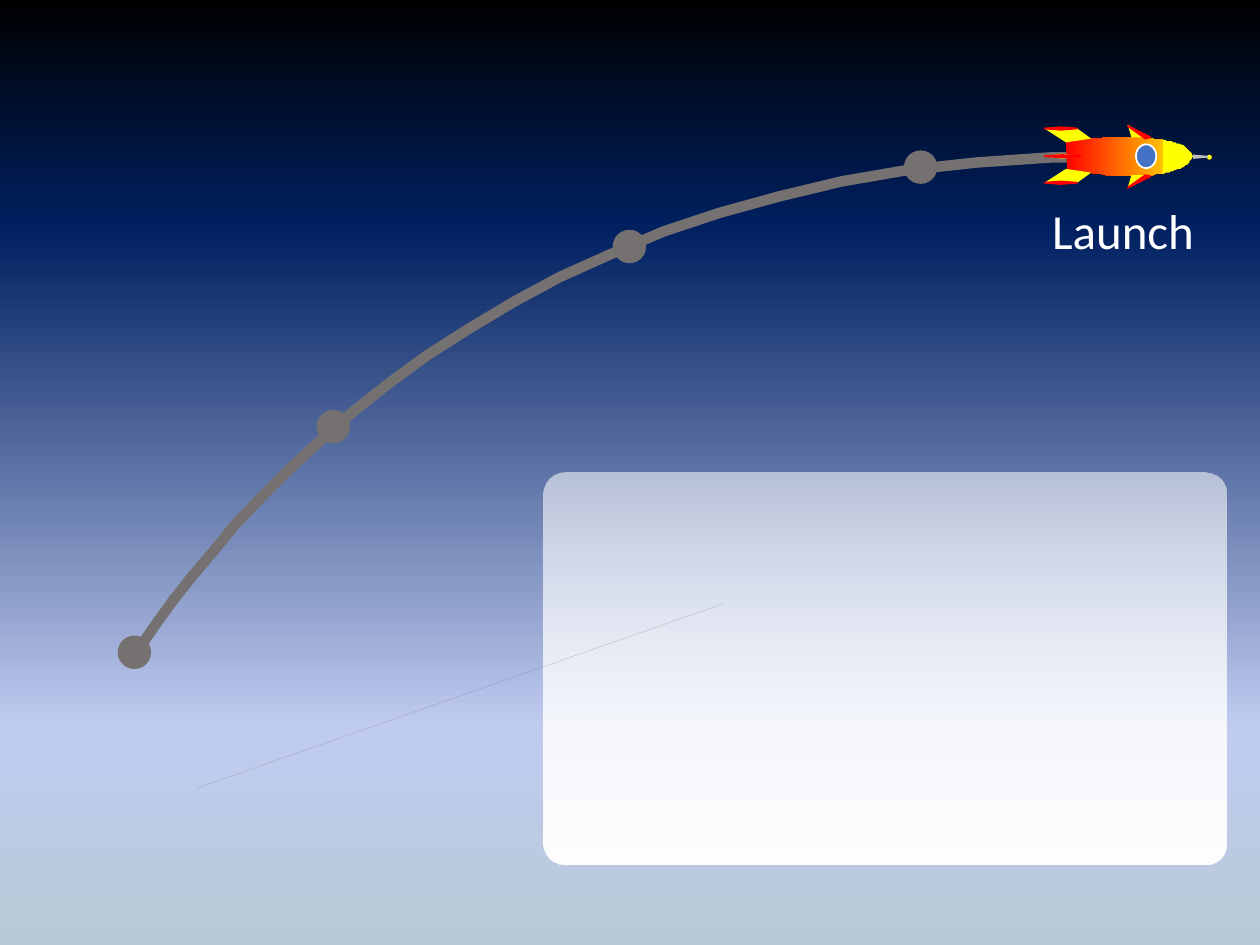
from lxml import etree
from pptx import Presentation
from pptx.dml.color import RGBColor
from pptx.enum import shapes as kinds
from pptx.oxml import ns
from pptx.util import Cm, Pt

GREY, RED, YELLOW, WHITE = "767171", "FF0000", "FFFF00", "FFFFFF"
KIND = kinds.MSO_SHAPE
hue = RGBColor.from_string


def paint(shape, fill=None, line=None, width=1):
    """Set a plain fill and line; None leaves that part empty."""
    shape.shadow.inherit = False
    for part, tone in ((shape.fill, fill), (shape.line.fill, line)):
        if tone:
            part.solid()
            part.fore_color.rgb = hue(tone)
        else:
            part.background()
    if line:
        shape.line.width = Pt(width)
    return shape


def trace(parent, steps, close=True):
    """Outline in 1/100 inch: pairs are corners, six numbers a cubic curve."""
    points = [steps[0]]
    for step in steps[1:]:
        if len(step) == 2:
            points.append(step)
            continue
        knots = [points[-1], step[:2], step[2:4], step[4:]]
        for i in range(1, 25):
            t = i / 24
            mix = ((1 - t) ** 3, 3 * t * (1 - t) ** 2, 3 * t * t * (1 - t), t ** 3)
            points.append(tuple(sum(m * k[axis] for m, k in zip(mix, knots))
                                for axis in (0, 1)))
    path = parent.build_freeform(*points[0], scale=Cm(2.54) / 100)
    path.add_line_segments(points[1:], close=close)
    return path.convert_to_shape()


prs = Presentation()
prs.slide_width, prs.slide_height = Cm(25.4), Cm(19.05)
slide = prs.slides.add_slide(prs.slide_layouts[6])
parts = slide.shapes

# Caption
box = parts.add_textbox(Cm(20.96), Cm(3.91), Cm(3.56), Cm(1.45))
frame = box.text_frame
frame.word_wrap = True
frame.text = "Launch"
font = frame.paragraphs[0].font
font.name, font.size = "Calibri", Pt(28)
font.color.rgb = hue(WHITE)

# Panel
panel = paint(parts.add_shape(KIND.ROUNDED_RECTANGLE,
                              Cm(10.95), Cm(9.53), Cm(13.77), Cm(7.9)))
panel.adjustments[0] = 0.055

# Faint straight line
thin = parts.add_connector(kinds.MSO_CONNECTOR.STRAIGHT,
                           Cm(3.99), Cm(15.88), Cm(14.58), Cm(12.17))
thin.line.width = Pt(0.25)
thin.line.color.rgb = hue("808080")
tone = thin.element.xpath(".//a:srgbClr")[0]
etree.SubElement(tone, ns.qn("a:alpha"), val="40000")
etree.SubElement(thin.element.spPr, ns.qn("a:effectLst"))

# Flight path and its stops
arc = trace(parts, [(103, 525), (175, 418, 397, 118, 894, 124)], close=False)
paint(arc, line=GREY, width=6)
for x, y in ((2.39, 12.83), (6.4, 8.28), (12.37, 4.65), (18.24, 3.05)):
    paint(parts.add_shape(KIND.OVAL, Cm(x), Cm(y), Cm(0.64), Cm(0.64)), GREY, GREY)

# Rocket body, window, antenna and nose
rocket = parts.add_group_shape().shapes
body = paint(trace(rocket, [(923, 111), (898, 109, 900, 107, 846, 112), (847, 135),
                            (901, 142, 898, 140, 923, 138)]))
for kind, x, y, w, h, turn, fill, line in (
        (KIND.OVAL, 22.9, 2.91, 0.41, 0.48, 0, "4472C4", WHITE),
        (KIND.OVAL, 24.33, 3.12, 0.1, 0.1, 0, YELLOW, None),
        (KIND.ISOSCELES_TRIANGLE, 24.18, 3.02, 0.05, 0.28, 90, "BFBFBF", "BFBFBF")):
    shape = paint(rocket.add_shape(kind, Cm(x), Cm(y), Cm(w), Cm(h)), fill, line)
    shape.rotation = turn
paint(trace(rocket, [(923, 111), (932, 113, 942, 114, 947, 124),
                     (943, 134, 932, 135, 923, 138)]), YELLOW)

# Paired fins: each outline is mirrored, y becoming total - y
for total, fill, line, fin in (
        (248, YELLOW, None, [(911, 109), (898, 109), (895, 99)]),
        (247, YELLOW, None, [(866, 110), (855, 102), (829, 102), (846, 113)]),
        (247, RED, RED, [(855, 102), (842, 103), (829, 102), (842, 101)]),
        (249, RED, RED, [(909, 110), (895, 100), (913, 109)])):
    for outline in (fin, [(x, total - y) for x, y in fin]):
        paint(trace(rocket, outline), fill, line)

# Middle fin
for half, fill, line in ((2.5, YELLOW, None), (1, RED, RED)):
    paint(trace(rocket, [(858, 124), (843, 124 + half), (829, 124),
                         (843, 124 - half)]), fill, line)

# Gradients: position, colour and opacity in percent
sky = [(0, "000000", 100), (24, "002060", 100), (77, "C0CBF0", 100), (100, "B8C9D6", 100)]
for item, root, angle, stops in (
        (slide.background, slide.element, 270, sky),
        (panel, panel.element, 270, [(0, WHITE, 55), (100, WHITE, 100)]),
        (body, body.element, 0, [(0, RED, 100), (100, "FFC000", 100)])):
    item.fill.gradient()
    item.fill.gradient_angle = angle
    ramp = root.xpath(".//a:gsLst")[0]
    for old in list(ramp):
        ramp.remove(old)
    for pos, tone, alpha in stops:
        stop = etree.SubElement(ramp, ns.qn("a:gs"), pos=str(pos * 1000))
        shade = etree.SubElement(stop, ns.qn("a:srgbClr"), val=tone)
        if alpha < 100:
            etree.SubElement(shade, ns.qn("a:alpha"), val=str(alpha * 1000))

prs.save("out.pptx")
